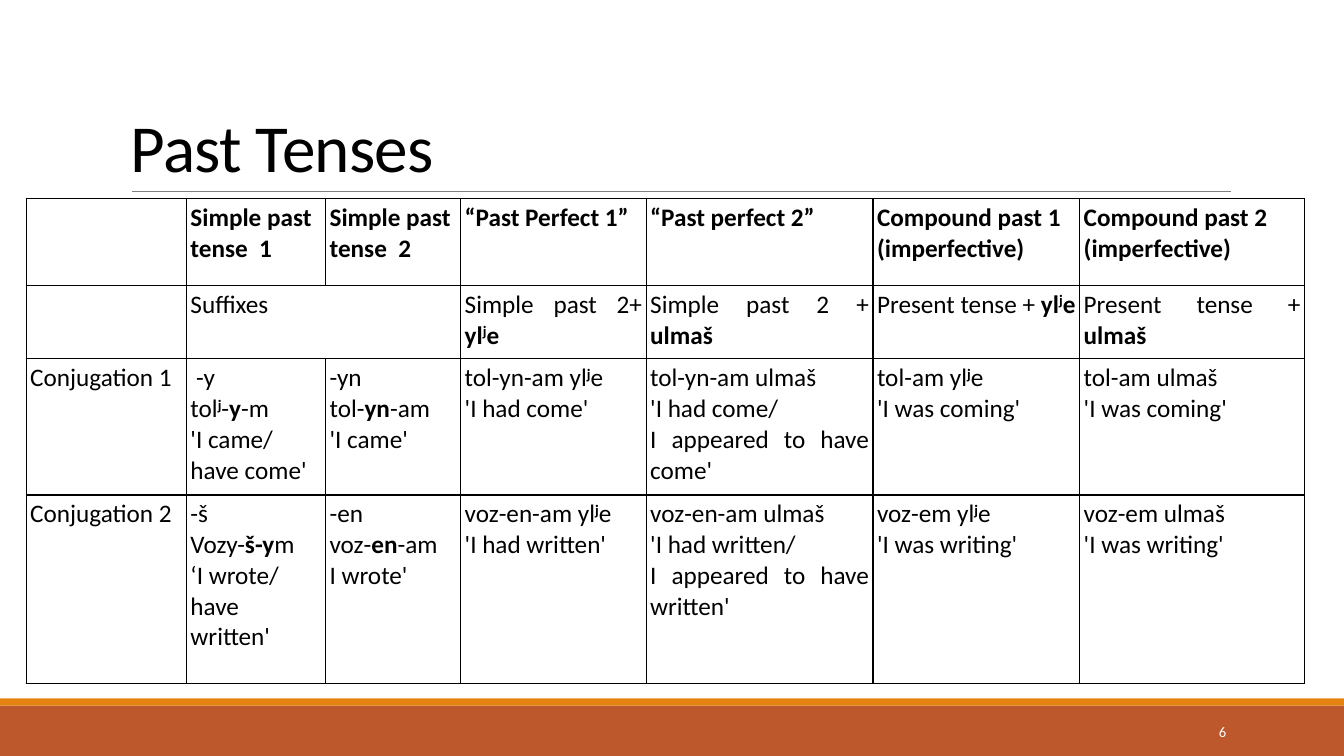
from lxml import etree
from pptx import Presentation, oxml, util as u
from pptx.dml.color import RGBColor
from pptx.enum import shapes, text
from pptx.oxml.ns import qn


def color(value):
    return RGBColor.from_string(value)


def style(span, size, value, bold=False):
    span.font.name = "Calibri"
    span.font.size = u.Pt(size)
    span.font.bold = bold
    span.font.color.rgb = color(value)


deck = Presentation()
deck.slide_width, deck.slide_height = u.Inches(13.33), u.Inches(7.5)
page = deck.slides.add_slide(deck.slide_layouts[6])

for top, height, fill in [(7, 0.5, "BD582C"), (6.93, 0.07, "E48312")]:
    band = page.shapes.add_shape(shapes.MSO_SHAPE.RECTANGLE, 0, u.Inches(top), deck.slide_width, u.Inches(height))
    band.shadow.inherit = False
    band.fill.solid()
    band.fill.fore_color.rgb = color(fill)
    band.line.fill.background()

rule = page.shapes.add_connector(
    shapes.MSO_CONNECTOR.STRAIGHT, u.Inches(1.31), u.Inches(1.9), u.Inches(12.21), u.Inches(1.9))
rule.line.color.rgb = color("808080")
rule.line.width = u.Pt(0.5)
etree.SubElement(rule._element.spPr, qn("a:effectLst"))

labels = [
    ("Past Tenses", (1.2, 0.31, 11, 1.59), 48, "000000", text.MSO_ANCHOR.BOTTOM, text.PP_ALIGN.LEFT, 0.85, -50),
    ("6", (10.83, 7.06, 1.43, 0.4), 10.5, "FFFFFF", text.MSO_ANCHOR.MIDDLE, text.PP_ALIGN.RIGHT, 1.0, 0),
]
for words, place, size, ink, anchor, align, spacing, tracking in labels:
    box = page.shapes.add_textbox(*map(u.Inches, place))
    box.text_frame.word_wrap = True
    box.text_frame.vertical_anchor = anchor
    box.text_frame.text = words
    para = box.text_frame.paragraphs[0]
    para.alignment = align
    para.line_spacing = spacing
    style(para.runs[0], size, ink)
    para.runs[0].font._element.set("spc", str(tracking))

# "|" separates runs, "*" marks bold, "^" marks bold superscript
rows = [
    ["", "*Simple past tense  1", "*Simple past tense  2", "*“Past Perfect 1”", "*“Past perfect 2”",
     "*Compound past 1\n*(imperfective)", "*Compound past 2\n*(imperfective)"],
    ["", "Suffixes", "", "Simple past 2+ |*yl|^j|*e", "Simple past 2 + |*ulmaš",
     "Present tense + |*yl|^j|*e", "Present tense + |*ulmaš"],
    ["Conjugation 1", " -y\ntol|^j|-|*y|-m\n'I came/ have come'", "-yn\ntol-|*yn|-am\n'I came'",
     "tol-yn-am yl|^j|e \n'I had come'", "tol-yn-am ulmaš \n'I had come/\nI appeared to have come'",
     "tol-am yl|^j|e\n'I was coming'", "tol-am ulmaš \n'I was coming'"],
    ["Conjugation 2", "-š\nVozy-|*š-y|m\n‘I wrote/ have written'", "-en\nvoz-|*en|-am\nI wrote'",
     "voz-en-am yl|^j|e \n'I had written'", "voz-en-am ulmaš \n'I had written/\nI appeared to have written'",
     "voz-em yl|^j|e\n'I was writing'", "voz-em ulmaš\n'I was writing'"],
]
widths = [1.59, 1.38, 1.34, 1.84, 2.25, 2.05, 2.23]
heights = [0.86, 0.73, 1.35, 1.87]
suffix_columns = (1, 2)

frame = page.shapes.add_table(
    len(rows), len(widths), u.Inches(0.26), u.Inches(1.97), u.Inches(sum(widths)), u.Inches(sum(heights)))
tenses = frame.table
tenses.first_row = tenses.horz_banding = False
for column, width in zip(tenses.columns, widths):
    column.width = u.Inches(width)
for row, height in zip(tenses.rows, heights):
    row.height = u.Inches(height)
tenses.cell(1, 1).merge(tenses.cell(1, 2))

for r, row in enumerate(rows):
    for c, words in enumerate(row):
        cell = tenses.cell(r, c)
        cell.margin_left = cell.margin_right = cell.margin_top = cell.margin_bottom = u.Inches(0.04)
        for side in "LRTB":
            border = etree.SubElement(cell._tc.get_or_add_tcPr(), qn(f"a:ln{side}"), w=str(u.Pt(1)))
            ink = etree.SubElement(border, qn("a:solidFill"))
            etree.SubElement(ink, qn("a:srgbClr"), val="000000")
        cell.fill.background()
        if not words:
            continue
        for i, line in enumerate(words.split("\n")):
            para = cell.text_frame.paragraphs[0] if i == 0 else cell.text_frame.add_paragraph()
            para.alignment = text.PP_ALIGN.LEFT if c in suffix_columns else text.PP_ALIGN.JUSTIFY
            for part in line.split("|"):
                span = para.add_run()
                span.text = part.lstrip("*^")
                style(span, 18, "000000", part[0] in "*^")
                if part[0] == "^":
                    span.font._element.set("baseline", "30000")

deck.save("out.pptx")
